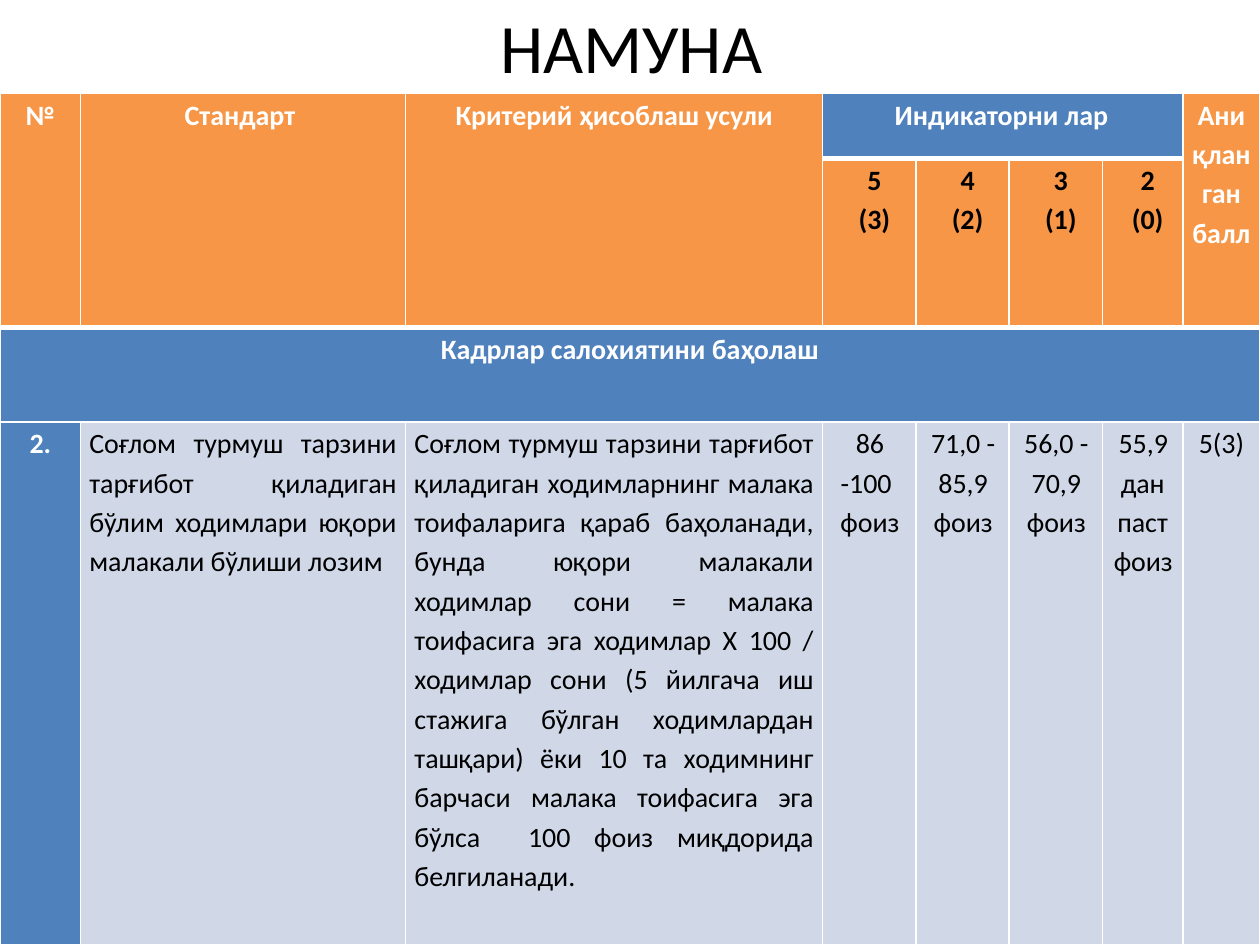
from dataclasses import dataclass

from lxml.etree import SubElement
from pptx import Presentation
from pptx.dml.color import RGBColor
from pptx.enum.text import MSO_ANCHOR, MSO_AUTO_SIZE, PP_ALIGN
from pptx.oxml.ns import qn
from pptx.util import Inches, Pt


@dataclass(frozen=True)
class Theme:
    font: str = "Calibri"
    title_size: float = 39.6
    table_size: float = 16
    orange: str = "F79646"
    blue: str = "4F81BD"
    pale: str = "D0D8E8"
    black: str = "000000"
    white: str = "FFFFFF"
    thin: float = 1
    thick: float = 3


@dataclass(frozen=True)
class CellStyle:
    fill: str
    color: str
    bold: bool = True
    align: PP_ALIGN = PP_ALIGN.CENTER
    indent: float = 0


THEME = Theme()
HEADER = CellStyle(THEME.orange, THEME.white)
INDICATORS = CellStyle(THEME.blue, THEME.white, indent=0.08)
SCORE = CellStyle(THEME.orange, THEME.black, indent=0.08)
SECTION = CellStyle(THEME.blue, THEME.white)
DESCRIPTION = CellStyle(THEME.pale, THEME.black, False, PP_ALIGN.JUSTIFY)
RANGE = CellStyle(THEME.pale, THEME.black, False, indent=0.01)
RESULT = CellStyle(THEME.pale, THEME.black, False)

COLUMNS = [0.64, 2.58, 3.31, 0.74, 0.74, 0.74, 0.64, 0.61]
ROWS = [0.52, 1.34, 0.75, 4.15]
MERGES = [((0, column), (1, column)) for column in (0, 1, 2, 7)]
MERGES += [((0, 3), (0, 6)), ((2, 0), (2, 7))]

STANDARD = ("Соғлом турмуш тарзини тарғибот қиладиган бўлим ходимлари "
            "юқори малакали бўлиши лозим")
CRITERION = (
    "Соғлом турмуш тарзини тарғибот қиладиган ходимларнинг малака тоифаларига "
    "қараб баҳоланади, бунда юқори малакали ходимлар сони = малака тоифасига "
    "эга ходимлар Х 100 / ходимлар сони (5 йилгача иш стажига бўлган "
    "ходимлардан ташқари) ёки 10 та ходимнинг барчаси малака тоифасига эга "
    "бўлса  100 фоиз миқдорида белгиланади.")

# One list per row: (first column, style, texts); a line break starts a paragraph.
CONTENT = [
    [(0, HEADER, ["№", "Стандарт ", "Критерий ҳисоблаш усули"]),
     (3, INDICATORS, ["Индикаторни лар  "]),
     (7, HEADER, ["Аниқланган балл "])],
    [(3, SCORE, ["5\n(3)", "4\n(2)", "3\n(1)", "2\n(0)"])],
    [(0, SECTION, ["Кадрлар салохиятини баҳолаш"])],
    [(0, SECTION, ["2."]),
     (1, DESCRIPTION, [STANDARD, CRITERION]),
     (3, RANGE, ["86 -100 \nфоиз", "71,0 -\n85,9\nфоиз",
                 "56,0 -\n70,9\nфоиз", "55,9 дан паст\nфоиз"]),
     (7, RESULT, ["5(3)"])],
]


def apply(target, values):
    for name, value in values.items():
        setattr(target, name, value)


class SlideBuilder:
    def __init__(self, deck, theme):
        self.theme = theme
        self.page = deck.slides.add_slide(deck.slide_layouts[5])

    def format_font(self, font, size, color, bold):
        apply(font, {"name": self.theme.font, "size": Pt(size), "bold": bold})
        font.color.rgb = RGBColor.from_string(color)

    def title(self, text, left, top, width, height):
        box = self.page.shapes.title
        apply(box, {"left": Inches(left), "top": Inches(top),
                    "width": Inches(width), "height": Inches(height)})
        frame = box.text_frame
        apply(frame, {"text": text, "word_wrap": True,
                      "auto_size": MSO_AUTO_SIZE.NONE,
                      "vertical_anchor": MSO_ANCHOR.MIDDLE})
        para = frame.paragraphs[0]
        para.alignment = PP_ALIGN.CENTER
        self.format_font(para.runs[0].font, self.theme.title_size,
                         self.theme.black, False)

    def table(self, left, top, columns, rows, merges):
        table = self.page.shapes.add_table(
            len(rows), len(columns), Inches(left), Inches(top),
            Inches(sum(columns)), Inches(sum(rows))).table
        for column, width in zip(table.columns, columns):
            column.width = Inches(width)
        for row, height in zip(table.rows, rows):
            row.height = Inches(height)
        for first, last in merges:
            table.cell(*first).merge(table.cell(*last))
        return table

    def cell(self, cell, text, style):
        apply(cell, {"text": text,
                     "margin_left": Inches(0.07), "margin_right": Inches(0.07),
                     "margin_top": 0, "margin_bottom": 0,
                     "vertical_anchor": MSO_ANCHOR.TOP})
        for para in cell.text_frame.paragraphs:
            apply(para, {"alignment": style.align, "line_spacing": 1.15})
            properties = para._p.get_or_add_pPr()
            properties.set("marL", "0")
            properties.set("indent", str(Inches(style.indent)))
            for span in para.runs:
                self.format_font(span.font, self.theme.table_size,
                                 style.color, style.bold)
        cell.fill.solid()
        cell.fill.fore_color.rgb = RGBColor.from_string(style.fill)

    def borders(self, cell, widths):
        """Draw the sides given as {"L": points, ...}, in the order L, R, T, B."""
        properties = cell._tc.get_or_add_tcPr()
        for position, (side, width) in enumerate(widths.items()):
            line = SubElement(properties, qn(f"a:ln{side}"), w=str(Pt(width)))
            fill = SubElement(line, qn("a:solidFill"))
            SubElement(fill, qn("a:srgbClr"), val=self.theme.white)
            properties.insert(position, line)


def main():
    deck = Presentation()
    apply(deck, {"slide_width": Inches(10), "slide_height": Inches(7.5)})
    builder = SlideBuilder(deck, THEME)
    builder.title("НАМУНА", 0.51, 0.13, 9, 0.46)
    table = builder.table(0, 0.74, COLUMNS, ROWS, MERGES)

    for row, groups in enumerate(CONTENT):
        for first, style, texts in groups:
            for column, text in enumerate(texts, first):
                builder.cell(table.cell(row, column), text, style)

    thin, thick = THEME.thin, THEME.thick
    for row in range(len(ROWS)):
        top = thick if row in (1, 2) else thin
        bottom = thick if row in (0, 1) else thin
        for column in range(len(COLUMNS)):
            builder.borders(table.cell(row, column),
                            {"L": thin, "R": thin, "T": top, "B": bottom})
    deck.save("out.pptx")


if __name__ == "__main__":
    main()
